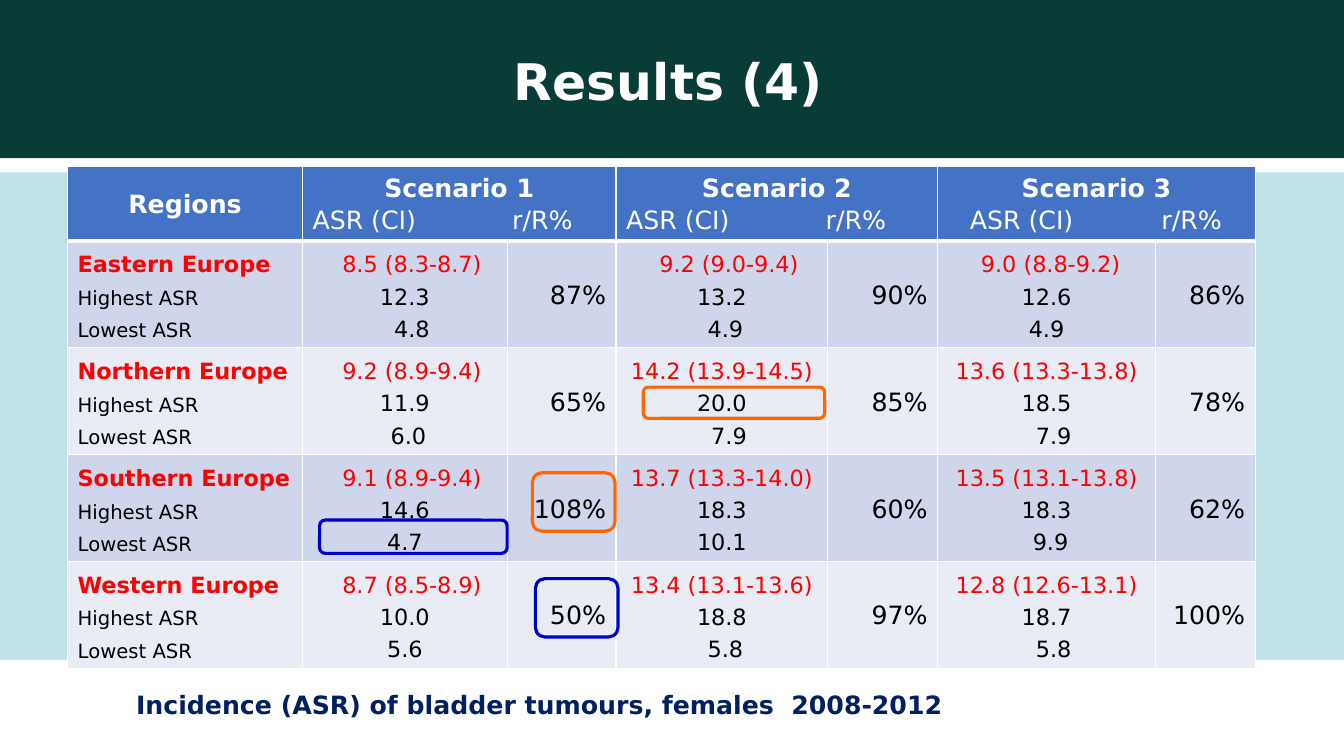
from lxml.etree import SubElement
from pptx import Presentation
from pptx.dml.color import RGBColor
from pptx.enum.shapes import MSO_SHAPE
from pptx.enum.text import MSO_ANCHOR, MSO_AUTO_SIZE, PP_ALIGN
from pptx.oxml.ns import qn
from pptx.util import Pt

PX = 9144
FONT = "DejaVu Sans"
WHITE = RGBColor(0xFF, 0xFF, 0xFF)
BLACK = RGBColor(0, 0, 0)
RED = RGBColor(0xFF, 0, 0)
GREEN = RGBColor(0x09, 0x3B, 0x37)
AQUA = RGBColor(0xC1, 0xE3, 0xE8)
HEAD = RGBColor(0x44, 0x72, 0xC4)
BANDS = RGBColor(0xCF, 0xD5, 0xEA), RGBColor(0xE9, 0xEB, 0xF5)
NAVY = RGBColor(0x00, 0x20, 0x60)
BLUE = RGBColor(0, 0, 0xCC)
ORANGE = RGBColor(0xFF, 0x66, 0)
LEFT, MID, RIGHT = PP_ALIGN.LEFT, PP_ALIGN.CENTER, PP_ALIGN.RIGHT

WIDTHS = 233, 203, 108, 210, 109, 216, 99
HEADS = [
    ("Scenario 1", "ASR (CI)\tr/R%", (198,)),
    ("Scenario 2", "ASR (CI)\tr/R%", (198,)),
    ("Scenario 3", "\tASR (CI)\tr/R%", (22, 212)),
]
# Each scenario: mean, its indent, highest, lowest, its indent, ratio
REGIONS = {
    "Eastern Europe": [
        ("8.5 (8.3-8.7)", 14, "12.3", "4.8", 14, "87%"),
        ("9.2 (9.0-9.4)", 14, "13.2", "4.9", 7, "90%"),
        ("9.0 (8.8-9.2)", 8, "12.6", "4.9", 0, "86%"),
    ],
    "Northern Europe": [
        ("9.2 (8.9-9.4)", 14, "11.9", "6.0", 7, "65%"),
        ("14.2 (13.9-14.5)", 0, "20.0", "7.9", 14, "85%"),
        ("13.6 (13.3-13.8)", 0, "18.5", "7.9", 14, "78%"),
    ],
    "Southern Europe": [
        ("9.1 (8.9-9.4)", 14, "14.6", "4.7", 0, "108%"),
        ("13.7 (13.3-14.0)", 0, "18.3", "10.1", 0, "60%"),
        ("13.5 (13.1-13.8)", 0, "18.3", "9.9", 8, "62%"),
    ],
    "Western Europe": [
        ("8.7 (8.5-8.9)", 14, "10.0", "5.6", 0, "50%"),
        ("13.4 (13.1-13.6)", 0, "18.8", "5.8", 7, "97%"),
        ("12.8 (12.6-13.1)", 0, "18.7", "5.8", 14, "100%"),
    ],
}
RINGS = [
    (531, 574, 82, 58, BLUE),
    (317, 516, 186, 33, BLUE),
    (528, 469, 82, 58, ORANGE),
    (638, 384, 180, 31, ORANGE),
]


def write(frame, text, size=16, color=BLACK, bold=False, align=MID,
          lead=Pt(23), indent=0, tabs=()):
    para = frame.paragraphs[0]
    if para.runs:
        para = frame.add_paragraph()
    props = para._p.get_or_add_pPr()
    if indent:
        props.set("marL", str(indent * PX))
        props.set("indent", "0")
    if tabs:
        stops = SubElement(props, qn("a:tabLst"))
        for tab in tabs:
            SubElement(stops, qn("a:tab"), pos=str(tab * PX), algn="l")
    para.alignment = align
    para.line_spacing = lead
    para.space_before = Pt(0)
    run = para.add_run()
    run.text = text
    font = run.font
    font.name, font.size, font.bold = FONT, Pt(size), bold
    font.color.rgb = color


class Deck:
    def __init__(self):
        self.file = Presentation()
        self.file.slide_width, self.file.slide_height = 1333 * PX, 750 * PX
        self.slide = self.file.slides.add_slide(self.file.slide_layouts[5])
        self.shapes = self.slide.shapes

    def shape(self, kind, x, y, w, h, fill=None, line=None):
        item = self.shapes.add_shape(kind, x * PX, y * PX, w * PX, h * PX)
        item.shadow.inherit = False
        if fill:
            item.fill.solid()
            item.fill.fore_color.rgb = fill
        else:
            item.fill.background()
        if line:
            item.line.color.rgb = line
            item.line.width = Pt(2.25)
        else:
            item.line.fill.background()

    def title(self, text, x, y, w, h):
        box = self.shapes.title
        self.shapes._spTree.append(box._element)
        box.left, box.top, box.width, box.height = x * PX, y * PX, w * PX, h * PX
        frame = box.text_frame
        frame.auto_size = MSO_AUTO_SIZE.NONE
        frame.vertical_anchor = MSO_ANCHOR.MIDDLE
        write(frame, text, size=36, color=WHITE, bold=True, lead=0.9)

    def label(self, text, x, y, w, h):
        box = self.shapes.add_textbox(x * PX, y * PX, w * PX, h * PX)
        frame = box.text_frame
        frame.word_wrap = True
        frame.auto_size = MSO_AUTO_SIZE.SHAPE_TO_FIT_TEXT
        write(frame, text, size=18, color=NAVY, bold=True, lead=1.1)

    def cell(self, cell, fill, base=1):
        props = cell._tc.get_or_add_tcPr()
        for side in "LRTB":
            width = Pt(base if side == "B" else 1)
            edge = SubElement(props, qn("a:ln" + side), w=str(width))
            paint = SubElement(edge, qn("a:solidFill"))
            SubElement(paint, qn("a:srgbClr"), val=str(WHITE))
        cell.fill.solid()
        cell.fill.fore_color.rgb = fill

    def table(self, x, y, top, high):
        rows = len(REGIONS) + 1
        full = top + high * len(REGIONS)
        grid = self.shapes.add_table(
            rows, len(WIDTHS), x * PX, y * PX, sum(WIDTHS) * PX, full * PX).table
        for col, width in zip(grid.columns, WIDTHS):
            col.width = width * PX
        for num, row in enumerate(grid.rows):
            row.height = (high if num else top) * PX
            for cell in row.cells:
                self.cell(cell, BANDS[(num - 1) % 2] if num else HEAD,
                          1 if num else 3)
        self.heads(grid)
        for num, (name, parts) in enumerate(REGIONS.items(), 1):
            self.region(grid, num, name, parts)

    def heads(self, grid):
        first = grid.cell(0, 0)
        first.vertical_anchor = MSO_ANCHOR.MIDDLE
        write(first.text_frame, "Regions", size=18, color=WHITE, bold=True)
        for num, (name, units, tabs) in enumerate(HEADS):
            cell = grid.cell(0, 2 * num + 1)
            cell.merge(grid.cell(0, 2 * num + 2))
            write(cell.text_frame, name, size=18, color=WHITE, bold=True)
            write(cell.text_frame, units, size=18, color=WHITE,
                  align=LEFT, tabs=tabs)

    def region(self, grid, row, name, parts):
        frame = grid.cell(row, 0).text_frame
        write(frame, name, color=RED, bold=True, align=LEFT)
        for text in ("Highest ASR", "Lowest ASR"):
            write(frame, text, size=14, align=LEFT)
        for num, (mean, shift, most, least, push, ratio) in enumerate(parts):
            frame = grid.cell(row, 2 * num + 1).text_frame
            write(frame, mean, color=RED, indent=shift)
            write(frame, most)
            write(frame, least, indent=push)
            cell = grid.cell(row, 2 * num + 2)
            cell.vertical_anchor = MSO_ANCHOR.MIDDLE
            write(cell.text_frame, ratio, size=18, align=RIGHT)


def main():
    deck = Deck()
    deck.shape(MSO_SHAPE.RECTANGLE, 0, 171, 1333, 484, fill=AQUA)
    deck.shape(MSO_SHAPE.RECTANGLE, 0, 0, 1333, 157, fill=GREEN)
    deck.table(67, 165, top=73, high=106)
    deck.title("Results (4)", 32, 29, 1262, 109)
    deck.label("Incidence (ASR) of bladder tumours, females  2008-2012",
               102, 676, 866, 40)
    for x, y, w, h, color in RINGS:
        deck.shape(MSO_SHAPE.ROUNDED_RECTANGLE, x, y, w, h, line=color)
    deck.file.save("out.pptx")


if __name__ == "__main__":
    main()
